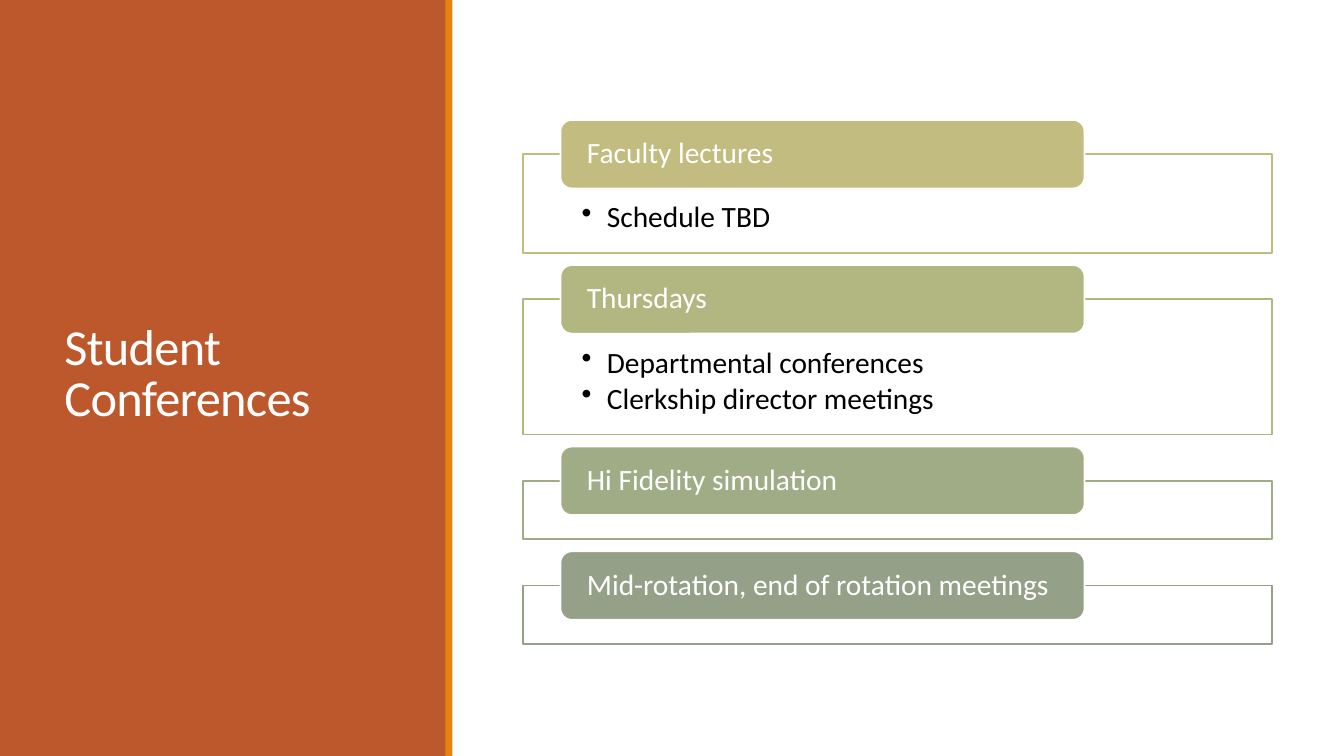
"""Build the Student Conferences slide: a title panel beside four tabbed topic boxes."""
from dataclasses import dataclass
from typing import Any

from lxml import etree
from pptx import Presentation
from pptx import util as u
from pptx.dml import color
from pptx.enum import shapes, text
from pptx.oxml import ns

COLORS = {
    "panel": "BD582C", "stripe": "E48312", "white": "FFFFFF", "black": "000000",
    "sand": "C2BC80", "olive": "B2B782", "sage": "A0AC85", "moss": "94A088",
}
SLIDE_W, SLIDE_H = u.Inches(13.333), u.Inches(7.5)
BOX_X, BOX_W = 38.93, 55.73
TAB_X, TAB_W, TAB_H = 41.7, 39, 9.07
FIRST_TOP, GAP = 20.4, 6.13
TAB_FORMAT = {"margin_left": u.Inches(0.23), "margin_right": u.Inches(0.23),
              "margin_top": 0, "margin_bottom": 0,
              "vertical_anchor": text.MSO_ANCHOR.MIDDLE}
BOX_FORMAT = {"margin_left": u.Inches(0.58), "margin_right": u.Inches(0.58),
              "margin_top": u.Inches(0.48), "margin_bottom": u.Inches(0.16),
              "vertical_anchor": text.MSO_ANCHOR.TOP}
TITLE_FORMAT = {"vertical_anchor": text.MSO_ANCHOR.MIDDLE}


@dataclass(frozen=True)
class Area:
    """A rectangle in percent of the slide's width and height."""
    x: float
    y: float
    w: float
    h: float

    def emu(self) -> tuple[int, ...]:
        """Return left, top, width and height in EMU."""
        return tuple(round(share * size / 100) for share, size in (
            (self.x, SLIDE_W), (self.y, SLIDE_H), (self.w, SLIDE_W), (self.h, SLIDE_H)))


@dataclass(frozen=True)
class Topic:
    """A heading tab with the bullets in the box below it."""
    heading: str
    color: str
    height: float
    bullets: tuple[str, ...] = ()


TOPICS = (
    Topic("Faculty lectures", "sand", 13.07, ("Schedule TBD",)),
    Topic("Thursdays", "olive", 17.87,
          ("Departmental conferences", "Clerkship director meetings")),
    Topic("Hi Fidelity simulation", "sage", 7.73),
    Topic("Mid-rotation, end of rotation meetings", "moss", 7.73),
)


def rgb(name: str) -> color.RGBColor:
    """Look up a named colour."""
    return color.RGBColor.from_string(COLORS[name])


def add_block(s: Any, kind: Any, area: Area, fill: str, line: str = "") -> Any:
    """Draw a filled shape, outlined if a line colour is named."""
    sp = s.shapes.add_shape(kind, *area.emu())
    sp.shadow.inherit = False
    sp.fill.solid()
    sp.fill.fore_color.rgb = rgb(fill)
    if line:
        sp.line.color.rgb = rgb(line)
        sp.line.width = u.Pt(1.25)
    else:
        sp.line.fill.background()
    return sp


def write(sp: Any, lines: tuple[str, ...], frame: dict[str, Any], ink: str,
          size: float = 21, spacing: float = 0.9, after: float = 0) -> None:
    """Fill a shape with left-aligned paragraphs."""
    tf = sp.text_frame
    for key, value in {"word_wrap": True, **frame}.items():
        setattr(tf, key, value)
    for i, line in enumerate(lines):
        p = tf.add_paragraph() if i else tf.paragraphs[0]
        for key, value in {"alignment": text.PP_ALIGN.LEFT, "line_spacing": spacing,
                           "space_after": u.Pt(after)}.items():
            setattr(p, key, value)
        r = p.add_run()
        r.text = line
        for key, value in {"name": "Calibri", "size": u.Pt(size)}.items():
            setattr(r.font, key, value)
        r.font.color.rgb = rgb(ink)


def add_bullet(p: Any) -> None:
    """Give a paragraph a hanging bullet."""
    pPr = p._p.get_or_add_pPr()
    pPr.set("marL", str(u.Inches(0.25)))
    pPr.set("indent", str(-u.Inches(0.25)))
    etree.SubElement(pPr, ns.qn("a:buChar")).set("char", "•")


def add_topic(s: Any, topic: Topic, top: float) -> None:
    """Draw a topic's box with its tab centred on the top edge."""
    sp = add_block(s, shapes.MSO_SHAPE.RECTANGLE,
                   Area(BOX_X, top, BOX_W, topic.height), "white", topic.color)
    if topic.bullets:
        write(sp, topic.bullets, BOX_FORMAT, "black", after=3)
        for p in sp.text_frame.paragraphs:
            add_bullet(p)
    tab = add_block(s, shapes.MSO_SHAPE.ROUNDED_RECTANGLE,
                    Area(TAB_X, top - TAB_H / 2, TAB_W, TAB_H), topic.color, "white")
    write(tab, (topic.heading,), TAB_FORMAT, "white")


def main() -> None:
    """Build and save the slide."""
    prs = Presentation()
    prs.slide_width, prs.slide_height = SLIDE_W, SLIDE_H
    s = prs.slides.add_slide(prs.slide_layouts[6])
    add_block(s, shapes.MSO_SHAPE.RECTANGLE, Area(0, 0, 33.2, 100), "panel")
    title = s.shapes.add_textbox(*Area(4.05, 7.6, 25.28, 84.13).emu())
    write(title, ("Student Conferences",), TITLE_FORMAT, "white", 36, 0.85)
    title.text_frame.paragraphs[0].runs[0].font._element.set("spc", "-50")
    add_block(s, shapes.MSO_SHAPE.RECTANGLE, Area(33.13, 0, 0.53, 100), "stripe")
    top = FIRST_TOP
    for topic in TOPICS:
        add_topic(s, topic, top)
        top += topic.height + GAP
    prs.save("out.pptx")


if __name__ == "__main__":
    main()
